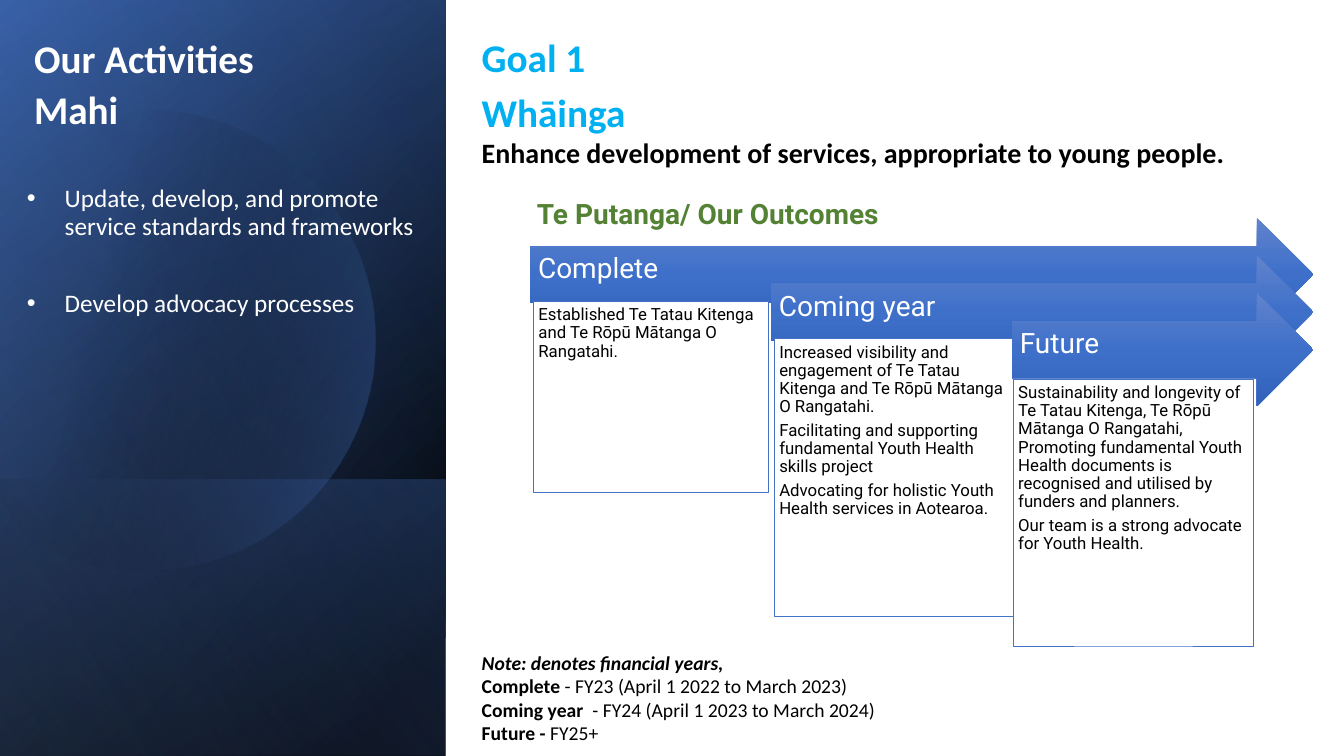
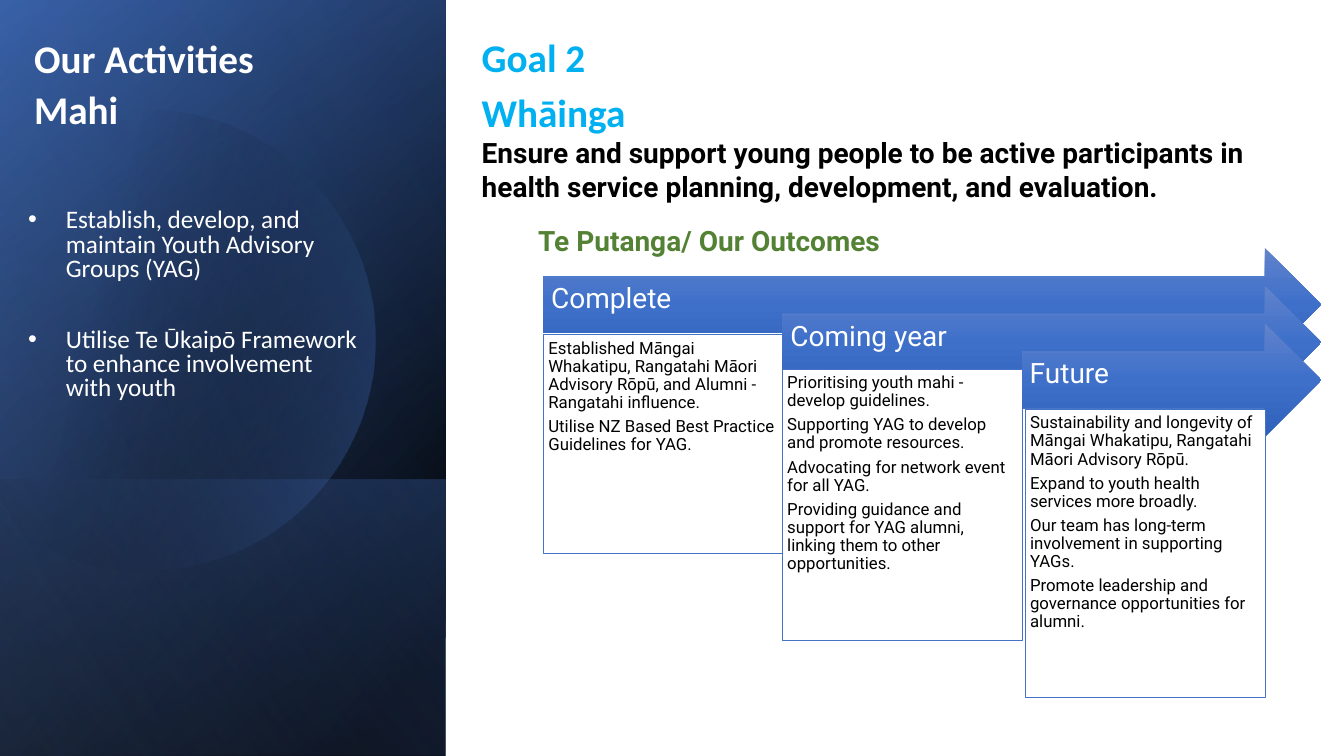
from math import acos, cos, sin

from lxml import etree
from pptx import Presentation
from pptx.dml.color import RGBColor
from pptx.enum.shapes import MSO_SHAPE as SHAPE
from pptx.enum.text import MSO_ANCHOR as ANCHOR, MSO_AUTO_SIZE as AUTO, PP_ALIGN as ALIGN
from pptx.oxml.ns import qn
from pptx.util import Cm, Pt

WHITE, BLACK = "FFFFFF", "000000"
BLUE, NAVY, PALE_BLUE = "4472C4", "2F5597", "8FAADC"
CYAN, GREEN = "00B0F0", "548235"
ARROW_STOPS = [(0, "6183CB", 100), (50, "3E70CA", 100), (100, "3062BB", 100)]

SLIDE_W, SLIDE_H = 33.87, 19.05
PANEL_W = 11.23
GOAL_LEFT, GOAL_W = 11.89, 20.55
ARROW_H, ARROW_DROP = 2.85, 0.95
STAGES = ["Complete", "Coming year", "Future"]

GOALS = [
    dict(
        name="Goal 1",
        statement="Enhance development of services, appropriate to young people.",
        statement_font="Calibri",
        activities=["Update, develop, and promote service standards and frameworks",
                    "Develop advocacy processes"],
        activities_box=(0.43, 4.56, 10.36, 4.5), activities_spacing=0.9, activities_gap=35.8,
        outcomes_at=(13.28, 4.93),
        arrows=dict(left=13.36, top=5.49, step=6.07, right=33.1),
        cards=[
            ((13.44, 7.59, 5.92, 4.83),
             ["Established Te Tatau Kitenga and Te Rōpū Mātanga O Rangatahi."]),
            ((19.51, 8.53, 6.07, 7.01),
             ["Increased visibility and engagement of Te Tatau Kitenga and Te Rōpū Mātanga "
              "O Rangatahi.",
              "Facilitating and supporting fundamental Youth Health skills project",
              "Advocating for holistic Youth Health services in Aotearoa."]),
            ((25.53, 9.55, 6.07, 6.73),
             ["Sustainability and longevity of Te Tatau Kitenga, Te Rōpū Mātanga O Rangatahi, "
              "Promoting fundamental Youth Health documents is recognised and utilised by "
              "funders and planners.",
              "Our team is a strong advocate for Youth Health."]),
        ],
    ),
    dict(
        name="Goal 2",
        statement="Ensure and support young people to be active participants in health "
                  "service planning, development, and evaluation.",
        statement_font="Roboto",
        activities=["Establish, develop, and maintain Youth Advisory Groups (YAG)",
                    "Utilise Te Ūkaipō Framework to enhance involvement with youth"],
        activities_box=(0.46, 5.15, 8.79, 5.3), activities_spacing=0.8, activities_gap=33.6,
        outcomes_at=(13.31, 5.61),
        arrows=dict(left=13.69, top=6.25, step=6.03, right=33.3),
        cards=[
            ((13.69, 8.43, 6.05, 5.51),
             ["Established Māngai Whakatipu, Rangatahi Māori Advisory Rōpū, and Alumni - "
              "Rangatahi influence.",
              "Utilise NZ Based Best Practice Guidelines for YAG."]),
            ((19.71, 9.3, 6.05, 6.83),
             ["Prioritising youth mahi - develop guidelines.",
              "Supporting YAG to develop and promote resources.",
              "Advocating for network event for all YAG.",
              "Providing guidance and support for YAG alumni, linking them to other "
              "opportunities."]),
            ((25.83, 10.31, 6.05, 7.26),
             ["Sustainability and longevity of Māngai Whakatipu, Rangatahi Māori Advisory Rōpū.",
              "Expand to youth health services more broadly.",
              "Our team has long-term involvement in supporting YAGs.",
              "Promote leadership and governance opportunities for alumni."]),
        ],
    ),
]

NOTE = [
    [("Note: denotes financial years,", dict(bold=True, italic=True))],
    [("Complete", dict(bold=True)), (" - FY23 (April 1 2022 to March 2023)", {})],
    [("Coming year ", dict(bold=True)), (" - FY24 (April 1 2023 to March 2024)", {})],
    [("Future - ", dict(bold=True)), ("FY25+", {})],
]


def rgb(value):
    return RGBColor.from_string(value)


def cms(*values):
    return [Cm(v) for v in values]


def fill_gradient(sp, stops, angle):
    """Fill with (position %, colour, opacity %) stops at a clockwise angle, without a line."""
    sp.shadow.inherit = False
    sp.line.fill.background()
    sp.fill.gradient()
    sp.fill.gradient_angle = 360 - angle
    gs_list = sp.element.spPr.find(qn("a:gradFill")).find(qn("a:gsLst"))
    for gs in list(gs_list):
        gs_list.remove(gs)
    for position, color, opacity in stops:
        gs = etree.SubElement(gs_list, qn("a:gs"), pos=str(position * 1000))
        clr = etree.SubElement(gs, qn("a:srgbClr"), val=color)
        if opacity < 100:
            etree.SubElement(clr, qn("a:alpha"), val=str(opacity * 1000))


def set_frame(tf, insets=(0.25, 0.13, 0.25, 0.13), anchor=ANCHOR.TOP, wrap=True):
    tf.word_wrap = wrap
    tf.auto_size = AUTO.NONE
    tf.vertical_anchor = anchor
    tf.margin_left, tf.margin_top, tf.margin_right, tf.margin_bottom = cms(*insets)


def next_paragraph(tf, spacing=1.0, after=0, align=ALIGN.LEFT):
    """Return the unused first paragraph or a new one, formatted."""
    p = tf.paragraphs[0] if not tf.paragraphs[0].runs else tf.add_paragraph()
    p.line_spacing = spacing
    p.space_before, p.space_after = Pt(0), Pt(after)
    p.alignment = align
    return p


def add_run(p, text, size, color, font="Calibri", bold=False, italic=False):
    r = p.add_run()
    r.text = text
    r.font.name, r.font.size = font, Pt(size)
    r.font.bold, r.font.italic = bold, italic
    r.font.color.rgb = rgb(color)


def add_text_box(s, box, wrap=True):
    tf = s.shapes.add_textbox(*cms(*box)).text_frame
    set_frame(tf, wrap=wrap)
    return tf


def add_panel_layer(s, top, stops, angle):
    """Add a quarter-turned, mirrored rectangle that fills the panel from top to the foot."""
    height = SLIDE_H - top
    shift = (PANEL_W - height) / 2
    sp = s.shapes.add_shape(SHAPE.RECTANGLE, *cms(shift, top - shift, height, PANEL_W))
    sp.rotation = 90
    sp.element.spPr.find(qn("a:xfrm")).set("flipH", "1")
    fill_gradient(sp, stops, angle)


def add_panel_circle(s, cx=3.66, cy=8.57, radius=5.8, steps=90):
    """Add a circle cut off by the left edge of the slide."""
    end = acos(-cx / radius)
    angles = [end * (2 * i / steps - 1) for i in range(steps + 1)]
    points = [cms(cx + radius * cos(a), cy + radius * sin(a)) for a in angles]
    builder = s.shapes.build_freeform(*points[0])
    builder.add_line_segments(points[1:], close=True)
    fill_gradient(builder.convert_to_shape(), [(29, BLACK, 0), (100, BLUE, 43)], 14)


def add_panel(s):
    add_panel_layer(s, 0, [(8, BLACK, 100), (100, NAVY, 100)], 50)
    add_panel_layer(s, 0, [(0, BLACK, 0), (99, BLUE, 46)], 30)
    add_panel_layer(s, 12.09, [(2, BLUE, 29), (100, BLACK, 30)], 130)
    add_panel_circle(s)
    add_panel_layer(s, 0, [(0, BLACK, 0), (99, PALE_BLUE, 11)], 120)


def place(ph, box):
    """Move a placeholder to box and in front of the panel."""
    ph.left, ph.top, ph.width, ph.height = cms(*box)
    ph.element.getparent().append(ph.element)
    set_frame(ph.text_frame)
    return ph.text_frame


def add_title(s):
    tf = place(s.shapes.title, (0.61, 0.87, 8.89, 3))
    for line in ("Our Activities", "Mahi"):
        add_run(next_paragraph(tf, 0.9, 6), line, 28, WHITE, bold=True)


def add_activities(s, goal):
    tf = place(s.placeholders[1], goal["activities_box"])
    for text in goal["activities"]:
        p = next_paragraph(tf, goal["activities_spacing"], goal["activities_gap"])
        pPr = p._p.get_or_add_pPr()
        pPr.set("marL", str(Cm(0.95)))
        pPr.set("indent", str(-Cm(0.95)))
        etree.SubElement(pPr, qn("a:buFont"), typeface="Arial")
        etree.SubElement(pPr, qn("a:buChar"), char="•")
        add_run(p, text, 18, WHITE)


def add_goal(s, goal):
    tf = add_text_box(s, (GOAL_LEFT, 0.71, GOAL_W, 4.2))
    add_run(next_paragraph(tf, after=6, align=ALIGN.JUSTIFY), goal["name"], 28, CYAN, bold=True)
    p = next_paragraph(tf, after=6)
    add_run(p, "Whāinga", 28, CYAN, bold=True)
    p.add_line_break()
    add_run(p, goal["statement"], 20, BLACK, goal["statement_font"], bold=True)


def add_outcomes_heading(s, goal):
    tf = add_text_box(s, (*goal["outcomes_at"], 14.4, 1.37))
    add_run(next_paragraph(tf, 0.9), "Te Putanga/ Our Outcomes", 20, GREEN, "Roboto", bold=True)


def add_stage_arrow(s, name, left, top, right):
    sp = s.shapes.add_shape(SHAPE.RIGHT_ARROW, *cms(left, top, right - left, ARROW_H))
    fill_gradient(sp, ARROW_STOPS, 90)
    set_frame(sp.text_frame, (0.2, 0.2, 0.71, 0.46), ANCHOR.MIDDLE)
    add_run(next_paragraph(sp.text_frame, 0.9), name, 20, WHITE, "Roboto")


def add_card(s, box, texts):
    sp = s.shapes.add_shape(SHAPE.RECTANGLE, *cms(*box))
    sp.shadow.inherit = False
    sp.fill.solid()
    sp.fill.fore_color.rgb = rgb(WHITE)
    sp.line.color.rgb = rgb(BLUE)
    sp.line.width = Pt(0.5)
    set_frame(sp.text_frame, (0.13,) * 4)
    for text in texts:
        add_run(next_paragraph(sp.text_frame, 0.9, 4.2), text, 12, BLACK, "Roboto")


def add_stages(s, goal):
    a = goal["arrows"]
    for i, (name, (box, texts)) in enumerate(zip(STAGES, goal["cards"])):
        add_stage_arrow(s, name, a["left"] + i * a["step"], a["top"] + i * ARROW_DROP, a["right"])
        add_card(s, box, texts)


def add_note(s):
    tf = add_text_box(s, (GOAL_LEFT, 16.26, 10.46, 2.64), wrap=False)
    for line in NOTE:
        p = next_paragraph(tf)
        for text, style in line:
            add_run(p, text, 14, BLACK, **style)


def add_goal_slide(prs, goal):
    s = prs.slides.add_slide(prs.slide_layouts[1])
    add_panel(s)
    add_title(s)
    add_activities(s, goal)
    add_goal(s, goal)
    add_outcomes_heading(s, goal)
    add_stages(s, goal)
    return s


def main():
    prs = Presentation()
    prs.slide_width, prs.slide_height = cms(SLIDE_W, SLIDE_H)
    first, _ = [add_goal_slide(prs, goal) for goal in GOALS]
    add_note(first)
    prs.save("out.pptx")


if __name__ == "__main__":
    main()
